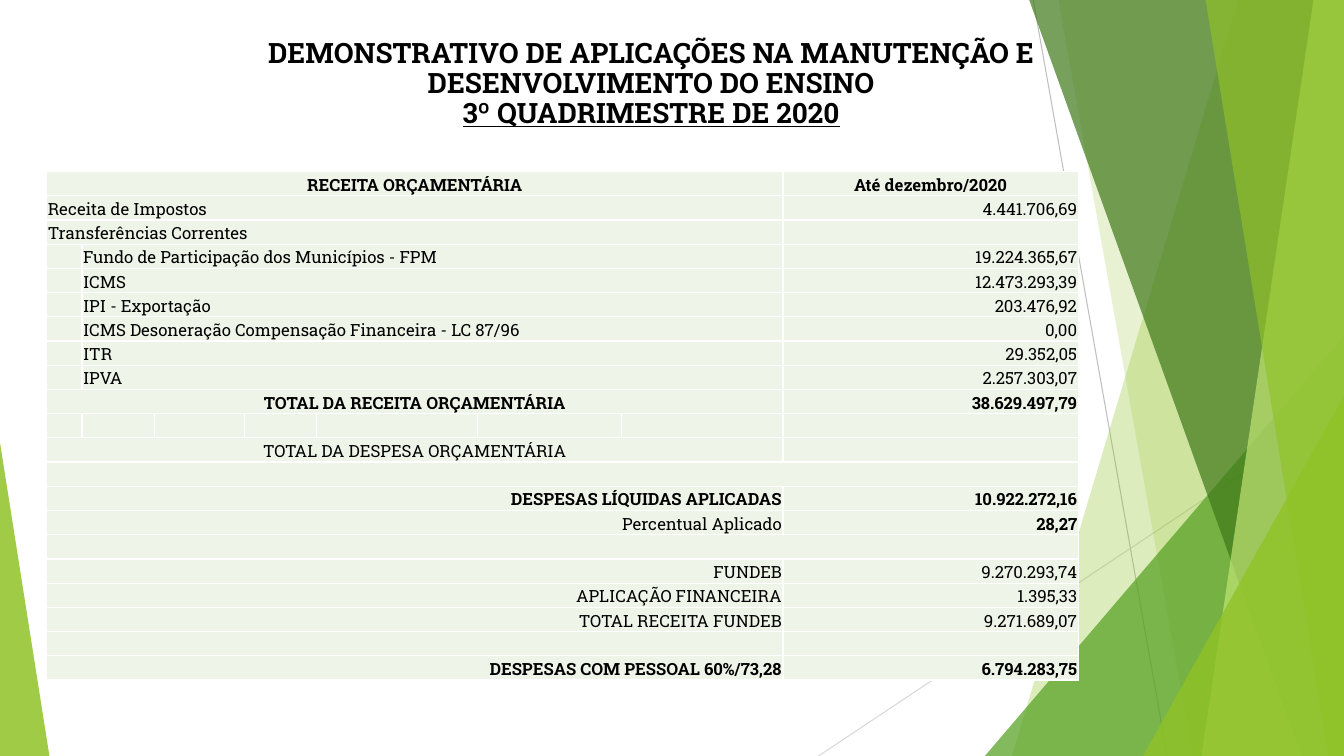
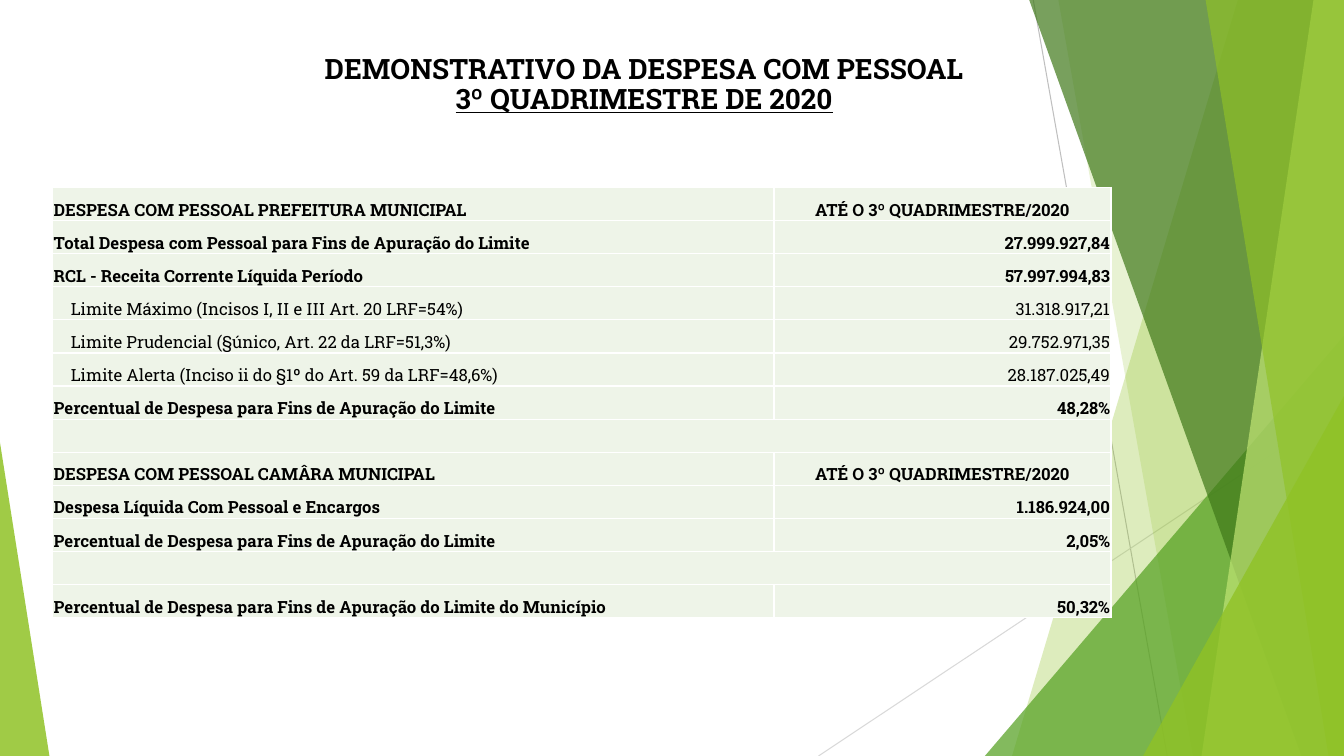
from dataclasses import dataclass
from functools import partial
from itertools import accumulate

from lxml.etree import SubElement
from pptx import Presentation
from pptx.dml.color import RGBColor
from pptx.enum.shapes import MSO_CONNECTOR as Connector, MSO_SHAPE as Shape
from pptx.enum.text import MSO_ANCHOR as Anchor, PP_ALIGN as Align
from pptx.oxml.ns import qn
from pptx.util import Inches, Pt

COLORS = {
    "lime": "90C226",
    "pale lime": "C0E474",
    "green": "54A021",
    "dark green": "3F7819",
    "gray": "BFBFBF",
    "light gray": "D9D9D9",
    "cell": "EEF4E8",
    "white": "FFFFFF",
    "black": "000000",
}
FONT = "Roboto Slab"
WIDTH, HEIGHT = Inches(13.33), Inches(7.5)
CELL_MARGIN = Inches(0.01)
INDENT = Inches(0.17)
PERIOD = "3º QUADRIMESTRE DE 2020"


def across(percent: float) -> int:
    return round(WIDTH * percent / 100)


def down(percent: float) -> int:
    return round(HEIGHT * percent / 100)


def rgb(name: str) -> RGBColor:
    return RGBColor.from_string(COLORS[name])


@dataclass(frozen=True)
class Ray:
    """A thin line; ends are percentages of the slide."""
    start: tuple[float, float]
    end: tuple[float, float]
    color: str


@dataclass(frozen=True)
class Band:
    """A full-height area from a slanted left edge to the right of the slide."""
    top: float
    bottom: float
    color: str
    opacity: int


@dataclass(frozen=True)
class Wedge:
    """A right triangle standing on the bottom of the slide."""
    left: float
    top: float
    width: float
    apex: float
    color: str
    opacity: int


@dataclass(frozen=True)
class Entry:
    """A table row: spans are counted in columns, the last two hold the text."""
    label: str = ""
    value: str = ""
    spans: tuple[int, ...] = (1, 1)
    align: Align = Align.LEFT
    value_align: Align = Align.RIGHT
    bold: bool = False
    value_bold: bool = False
    indent: int = 0


@dataclass(frozen=True)
class Page:
    """Places are percentages of the slide; columns are relative widths."""
    title: str
    title_at: tuple[float, float]
    table_at: tuple[float, float, float, float]
    columns: tuple[int, ...]
    entries: tuple[Entry, ...]


DECORATION = (
    Ray((76.88, 0), (86.85, 100), "gray"),
    Ray((100, 53.73), (60.9, 100), "light gray"),
    Band(92.1, 75.3, "lime", 30),
    Band(78.75, 88.75, "lime", 20),
    Wedge(73.28, 44.4, 26.72, 1, "green", 72),
    Band(76.58, 96.83, "dark green", 70),
    Band(97.73, 89.4, "pale lime", 70),
    Band(89.7, 98.85, "lime", 65),
    Wedge(85.05, 52.4, 14.95, 1, "lime", 80),
    Wedge(0, 58.53, 3.68, 0, "lime", 85),
)

Strong = partial(Entry, bold=True, value_bold=True)
Wide = partial(Entry, spans=(7, 1))
WideStrong = partial(Strong, spans=(7, 1))
Nested = partial(Entry, spans=(1, 6, 1))
Limit = partial(Entry, indent=INDENT)
Heading = partial(Strong, value="ATÉ O 3º QUADRIMESTRE/2020", value_align=Align.CENTER)

PAGES = (
    Page(
        "DEMONSTRATIVO DE APLICAÇÕES NA MANUTENÇÃO E DESENVOLVIMENTO DO ENSINO",
        (13.2, 4.53),
        (3.48, 22.7, 76.75, 67.33),
        (35, 72, 89, 72, 160, 143, 160, 293),
        (
            WideStrong("RECEITA ORÇAMENTÁRIA", "Até dezembro/2020",
                       align=Align.CENTER, value_align=Align.CENTER),
            Wide("Receita de Impostos", "4.441.706,69"),
            Wide("Transferências Correntes"),
            Nested("Fundo de Participação dos Municípios - FPM", "19.224.365,67"),
            Nested("ICMS", "12.473.293,39"),
            Nested("IPI - Exportação", "203.476,92"),
            Nested("ICMS Desoneração Compensação Financeira - LC 87/96", "0,00"),
            Nested("ITR", "29.352,05"),
            Nested("IPVA", "2.257.303,07"),
            WideStrong("TOTAL DA RECEITA ORÇAMENTÁRIA", "38.629.497,79", align=Align.CENTER),
            Entry(spans=(1,) * 8),
            Wide("TOTAL DA DESPESA ORÇAMENTÁRIA", align=Align.CENTER),
            Entry(spans=(8,)),
            WideStrong("DESPESAS LÍQUIDAS APLICADAS", "10.922.272,16", align=Align.RIGHT),
            Wide("Percentual Aplicado", "28,27", align=Align.RIGHT, value_bold=True),
            Entry(spans=(8,)),
            Wide("FUNDEB", "9.270.293,74", align=Align.RIGHT),
            Wide("APLICAÇÃO FINANCEIRA", "1.395,33", align=Align.RIGHT),
            Wide("TOTAL RECEITA FUNDEB", "9.271.689,07", align=Align.RIGHT),
            Wide(),
            WideStrong("DESPESAS COM PESSOAL 60%/73,28", "6.794.283,75", align=Align.RIGHT),
        ),
    ),
    Page(
        "DEMONSTRATIVO DA DESPESA COM PESSOAL",
        (12.68, 6.67),
        (3.92, 24.8, 78.75, 56.93),
        (715, 334),
        (
            Heading("DESPESA COM PESSOAL PREFEITURA MUNICIPAL"),
            Strong("Total Despesa com Pessoal para Fins de Apuração do Limite", "27.999.927,84"),
            Strong("RCL - Receita Corrente Líquida Período", "57.997.994,83"),
            Limit("Limite Máximo (Incisos I, II e III Art. 20 LRF=54%)", "31.318.917,21"),
            Limit("Limite Prudencial (§único, Art. 22 da LRF=51,3%)", "29.752.971,35"),
            Limit("Limite Alerta (Inciso ii do §1º do Art. 59 da LRF=48,6%)", "28.187.025,49"),
            Strong("Percentual de Despesa para Fins de Apuração do Limite", "48,28%"),
            Entry(spans=(2,)),
            Heading("DESPESA COM PESSOAL CAMÂRA MUNICIPAL"),
            Strong("Despesa Líquida Com Pessoal e Encargos", "1.186.924,00"),
            Strong("Percentual de Despesa para Fins de Apuração do Limite", "2,05%"),
            Entry(spans=(2,)),
            Strong("Percentual de Despesa para Fins de Apuração do Limite do Município", "50,32%"),
        ),
    ),
)


def write(paragraph, text: str, *, size: int = 12, bold: bool = False,
          underline: bool = False, align: Align = Align.LEFT) -> None:
    """Add a run; without text only the height of the empty line is set."""
    paragraph.alignment = align
    if not text:
        SubElement(paragraph._p, qn("a:endParaRPr"), sz=str(size * 100))
        return
    run = paragraph.add_run()
    run.text = text
    font = run.font
    font.name, font.size, font.bold = FONT, Pt(size), bold
    font.underline = underline
    font.color.rgb = rgb("black")


def paint(shape, color: str, opacity: int) -> None:
    shape.shadow.inherit = False
    shape.line.fill.background()
    shape.fill.solid()
    shape.fill.fore_color.rgb = rgb(color)
    color_element = shape._element.spPr.find(qn("a:solidFill"))[0]
    SubElement(color_element, qn("a:alpha"), val=str(opacity * 1000))


def draw_ray(slide, ray: Ray) -> None:
    (x1, y1), (x2, y2) = ray.start, ray.end
    line = slide.shapes.add_connector(
        Connector.STRAIGHT, across(x1), down(y1), across(x2), down(y2))
    line.line.color.rgb = rgb(ray.color)
    line.line.width = Pt(0.75)
    SubElement(line._element.spPr, qn("a:effectLst"))


def draw_band(slide, band: Band) -> None:
    builder = slide.shapes.build_freeform(across(band.top), 0)
    builder.add_line_segments(
        [(WIDTH, 0), (WIDTH, HEIGHT), (across(band.bottom), HEIGHT)], close=True)
    paint(builder.convert_to_shape(), band.color, band.opacity)


def draw_wedge(slide, wedge: Wedge) -> None:
    triangle = slide.shapes.add_shape(
        Shape.ISOSCELES_TRIANGLE, across(wedge.left), down(wedge.top),
        across(wedge.width), down(100 - wedge.top))
    triangle.adjustments[0] = wedge.apex
    paint(triangle, wedge.color, wedge.opacity)


DRAWERS = {Ray: draw_ray, Band: draw_band, Wedge: draw_wedge}


def draw_title(slide, page: Page) -> None:
    left, top = page.title_at
    box = slide.shapes.add_textbox(across(left), down(top), across(70.5), down(19.2))
    box.text_frame.word_wrap = True
    paragraph = box.text_frame.paragraphs[0]
    paragraph.line_spacing = 0.9
    title = partial(write, paragraph, size=20, bold=True, align=Align.CENTER)
    title(page.title)
    paragraph.add_line_break()
    title(PERIOD, underline=True)


def style_cell(cell) -> None:
    """Set margins, white borders and fill."""
    cell.margin_left = cell.margin_right = cell.margin_top = CELL_MARGIN
    cell.margin_bottom = 0
    cell.vertical_anchor = Anchor.BOTTOM
    properties = cell._tc.get_or_add_tcPr()
    for side in ("lnL", "lnR", "lnT", "lnB"):
        border = SubElement(properties, qn(f"a:{side}"), w=str(Pt(1)))
        fill = SubElement(border, qn("a:solidFill"))
        SubElement(fill, qn("a:srgbClr"), val=COLORS["white"])
    cell.fill.solid()
    cell.fill.fore_color.rgb = rgb("cell")


def fill_row(table, row: int, entry: Entry) -> None:
    ends = list(accumulate(entry.spans))
    starts = [end - span for end, span in zip(ends, entry.spans)]
    for start, end in zip(starts, ends):
        if end - start > 1:
            table.cell(row, start).merge(table.cell(row, end - 1))
    texts = {}
    if len(starts) > 1:
        label_column, value_column = starts[-2:]
        texts[label_column] = (entry.label, entry.bold, entry.align)
        texts[value_column] = (entry.value, entry.value_bold, entry.value_align)
        table.cell(row, label_column).margin_left = CELL_MARGIN + entry.indent
    for column in range(len(table.columns)):
        cell = table.cell(row, column)
        style_cell(cell)
        text, bold, align = texts.get(column, ("", False, Align.LEFT))
        write(cell.text_frame.paragraphs[0], text, bold=bold, align=align)
    if entry.indent:
        table.cell(row, starts[-2]).margin_left = CELL_MARGIN + entry.indent


def draw_table(slide, page: Page) -> None:
    left, top, width, height = page.table_at
    count = len(page.entries)
    table = slide.shapes.add_table(
        count, len(page.columns), across(left), down(top), across(width), down(height)).table
    table.first_row = table.horz_banding = False
    for column, share in zip(table.columns, page.columns):
        column.width = across(width * share / sum(page.columns))
    for row, entry in enumerate(page.entries):
        table.rows[row].height = down(height / count)
        fill_row(table, row, entry)


def main() -> None:
    presentation = Presentation()
    presentation.slide_width, presentation.slide_height = WIDTH, HEIGHT
    for page in PAGES:
        slide = presentation.slides.add_slide(presentation.slide_layouts[6])
        for item in DECORATION:
            DRAWERS[type(item)](slide, item)
        draw_title(slide, page)
        draw_table(slide, page)
    presentation.save("out.pptx")


if __name__ == "__main__":
    main()
